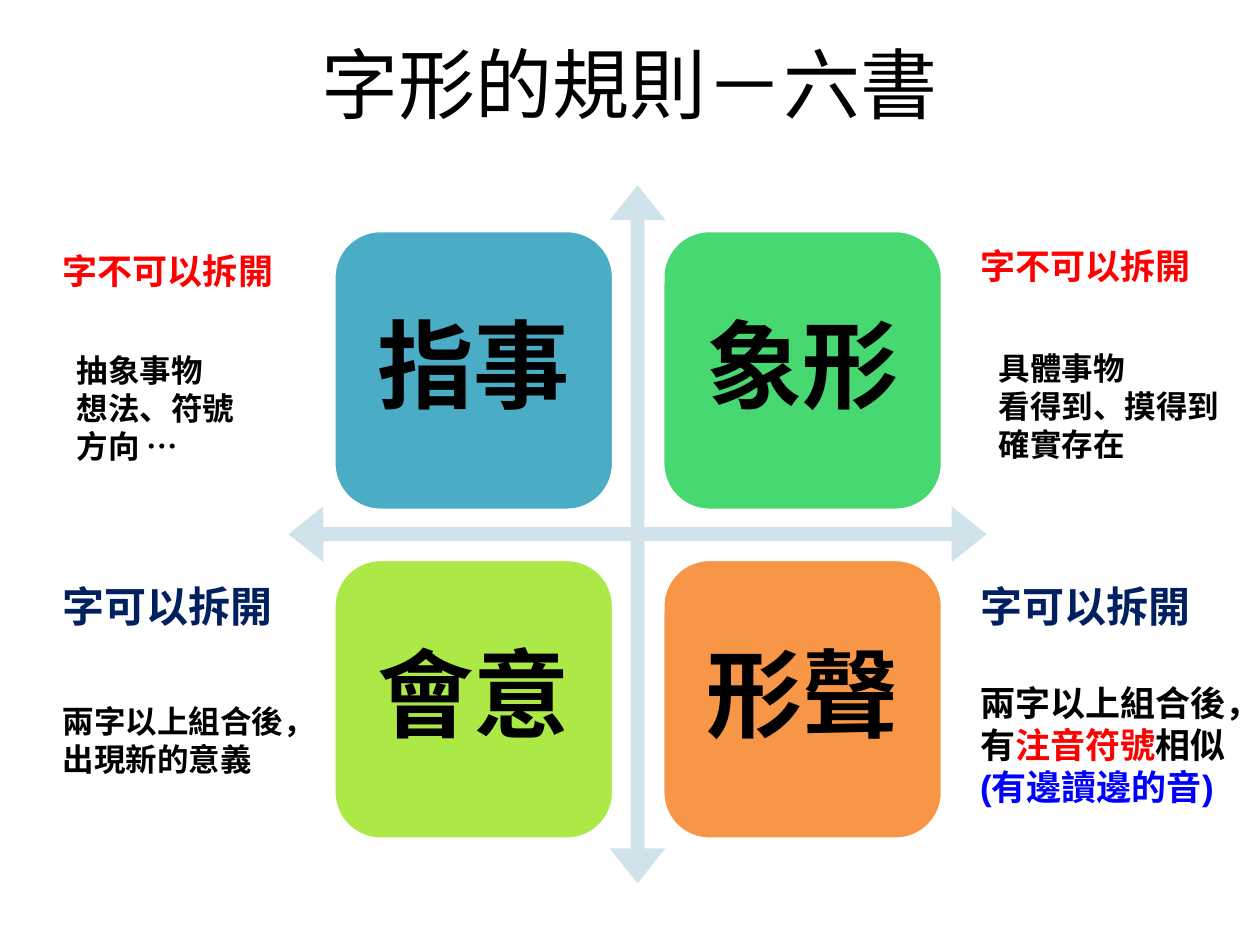
from lxml import etree
from pptx import Presentation
from pptx.dml.color import RGBColor
from pptx.enum import shapes, text
from pptx.oxml.ns import qn
from pptx.util import Inches, Pt

BLACK = RGBColor(0x00, 0x00, 0x00)
WHITE = RGBColor(0xFF, 0xFF, 0xFF)
RED = RGBColor(0xFF, 0x00, 0x00)
BLUE = RGBColor(0x00, 0x00, 0xFF)
NAVY = RGBColor(0x00, 0x20, 0x60)
PALE = RGBColor(0xD0, 0xE3, 0xEA)
TEAL = RGBColor(0x4B, 0xAC, 0xC6)
GREEN = RGBColor(0x47, 0xD8, 0x72)
LIME = RGBColor(0xAC, 0xE9, 0x46)
ORANGE = RGBColor(0xF7, 0x96, 0x46)
CJK_FONT = "Noto Sans CJK TC"

TILE_LEFT, TILE_TOP, TILE_SIZE, TILE_PITCH = 2.65, 1.83, 2.22, 2.61
TILES = [[("指事", TEAL), ("象形", GREEN)], [("會意", LIME), ("形聲", ORANGE)]]

HEADINGS = [
    (0.4, 1.93, 0.44, "字不可以拆開", 20, RED),
    (7.68, 1.89, 0.44, "字不可以拆開", 20, RED),
    (0.4, 4.56, 0.5, "字可以拆開", 24, NAVY),
    (7.68, 4.56, 0.5, "字可以拆開", 24, NAVY),
]
NOTES = [
    ((0.51, 2.74, 1.78, 1.01), 18,
     [[("抽象事物", BLACK)], [("想法、符號", BLACK)], [("方向 …", BLACK)]]),
    ((7.83, 2.72, 2.02, 1.01), 18,
     [[("具體事物", BLACK)], [("看得到、摸得到", BLACK)], [("確實存在", BLACK)]]),
    ((0.4, 5.52, 2.31, 0.71), 18, [[("兩字以上組合後，出現新的意義", BLACK)]]),
    ((7.68, 5.36, 2.23, 1.45), 20,
     [[("兩字以上組合後，有", BLACK), ("注音符號", RED), ("相似", BLACK)],
      [("(有邊讀邊的音)", BLUE)]]),
]


def set_all(target, **values):
    """Set each named attribute of the target."""
    for name, value in values.items():
        setattr(target, name, value)


def write(frame, lines, size, font="Arial", bold=True, **paragraph_format):
    """Fill a text frame with lines made of (wording, colour) spans."""
    for index, line in enumerate(lines):
        para = frame.add_paragraph() if index else frame.paragraphs[0]
        set_all(para, **paragraph_format)
        for wording, colour in line:
            span = para.add_run()
            span.text = wording
            set_all(span.font, name=font, size=Pt(size), bold=bold)
            span.font.color.rgb = colour
            east_asian = etree.SubElement(span.font._element, qn("a:ea"))
            east_asian.set("typeface", CJK_FONT)


def add_text(page, place, lines, size, wrap=True):
    """Add a text box that grows with its wording."""
    box = page.shapes.add_textbox(*map(Inches, place))
    set_all(box.text_frame, word_wrap=wrap,
            auto_size=text.MSO_AUTO_SIZE.SHAPE_TO_FIT_TEXT)
    write(box.text_frame, lines, size)


def add_title(page, wording):
    """Add the centred slide title."""
    box = page.shapes.add_textbox(Inches(0.5), Inches(0.03), Inches(9), Inches(1.25))
    set_all(box.text_frame, word_wrap=True, vertical_anchor=text.MSO_ANCHOR.MIDDLE)
    write(box.text_frame, [[(wording, BLACK)]], 44, "Calibri", False,
          alignment=text.PP_ALIGN.CENTER)


def add_filled(page, kind, place, colour):
    """Add a preset shape with a plain fill and no shadow."""
    shape = page.shapes.add_shape(kind, *map(Inches, place))
    shape.shadow.inherit = False
    shape.fill.solid()
    shape.fill.fore_color.rgb = colour
    return shape


def add_axes(page):
    """Add the four-way arrow behind the tiles."""
    arrow = add_filled(page, shapes.MSO_SHAPE.QUAD_ARROW, (2.29, 1.47, 5.54, 5.54), PALE)
    arrow.line.fill.background()
    for index, value in enumerate((0.02, 0.04, 0.05)):
        arrow.adjustments[index] = value


def add_tile(page, row, column, wording, colour):
    """Add one rounded tile of the two by two grid."""
    place = (TILE_LEFT + column * TILE_PITCH, TILE_TOP + row * TILE_PITCH,
             TILE_SIZE, TILE_SIZE)
    tile = add_filled(page, shapes.MSO_SHAPE.ROUNDED_RECTANGLE, place, colour)
    tile.line.color.rgb = WHITE
    tile.line.width = Pt(2)
    set_all(tile.text_frame, word_wrap=True, vertical_anchor=text.MSO_ANCHOR.MIDDLE,
            margin_left=Inches(0.2), margin_right=Inches(0.2))
    write(tile.text_frame, [[(wording, BLACK)]], 55, "Calibri",
          alignment=text.PP_ALIGN.CENTER, line_spacing=0.9)


def main():
    """Build the slide and save it."""
    deck = Presentation()
    set_all(deck, slide_width=Inches(10), slide_height=Inches(7.5))
    page = deck.slides.add_slide(deck.slide_layouts[6])
    add_axes(page)
    for row, tiles in enumerate(TILES):
        for column, (wording, colour) in enumerate(tiles):
            add_tile(page, row, column, wording, colour)
    for left, top, height, wording, size, colour in HEADINGS:
        add_text(page, (left, top, 1.88, height), [[(wording, colour)]], size, wrap=False)
    for place, size, lines in NOTES:
        add_text(page, place, lines, size)
    add_title(page, "字形的規則－六書")
    deck.save("out.pptx")


if __name__ == "__main__":
    main()
